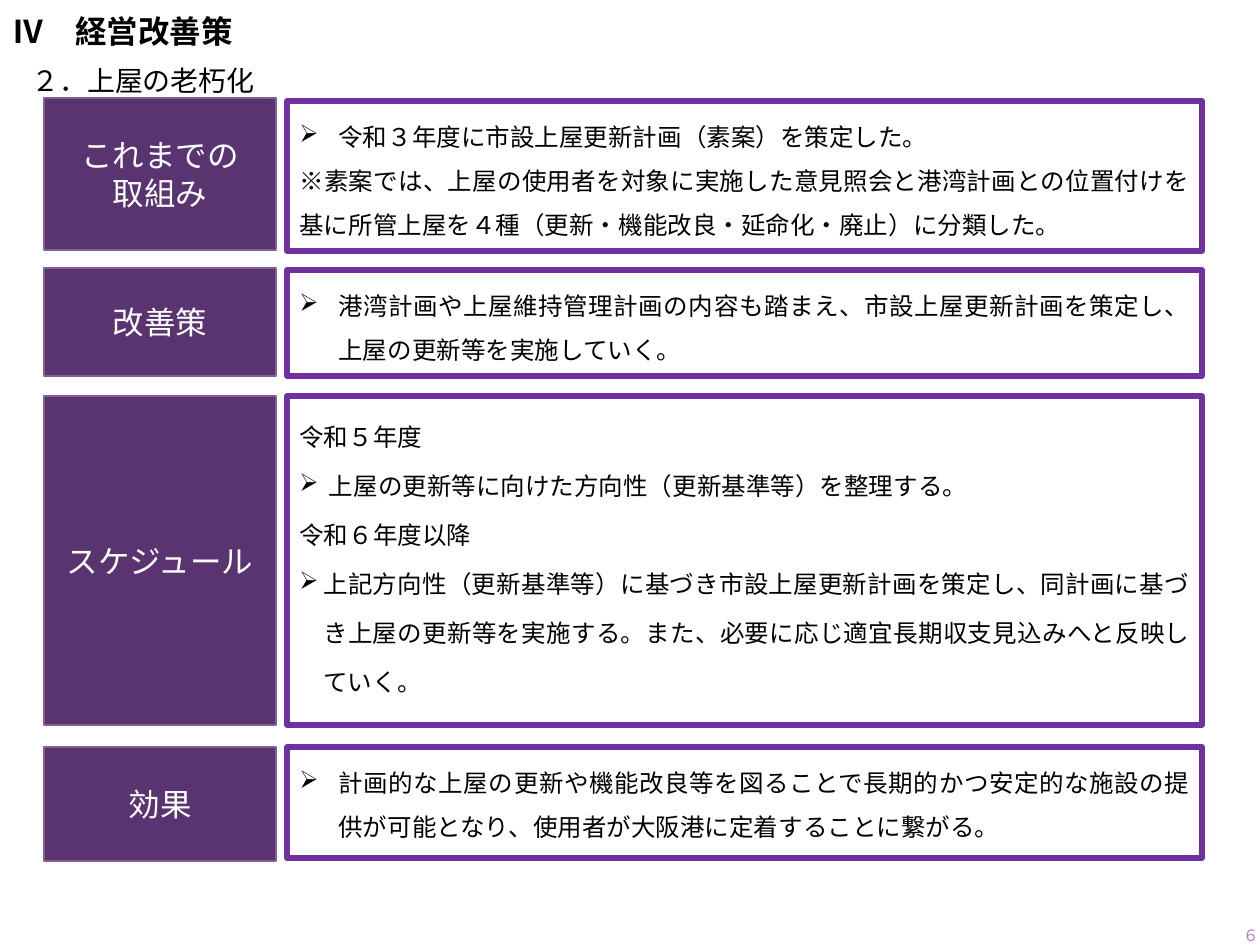
from dataclasses import dataclass

from lxml.etree import SubElement
from pptx import Presentation
from pptx.dml.color import RGBColor
from pptx.enum.shapes import MSO_SHAPE
from pptx.enum.text import MSO_ANCHOR, PP_ALIGN
from pptx.oxml.ns import qn
from pptx.util import Emu, Pt

SCALE = 914400 / 126
BLACK = RGBColor(0x00, 0x00, 0x00)
WHITE = RGBColor(0xFF, 0xFF, 0xFF)
PLUM = RGBColor(0x5A, 0x34, 0x71)
MAUVE = RGBColor(0x80, 0x62, 0x92)
PURPLE = RGBColor(0x70, 0x30, 0xA0)
LILAC = RGBColor(0xAD, 0x84, 0xC6)
SANS = "Arial"
SPARTAN = "League Spartan"
NOTO = "Noto Sans CJK JP"


def px(n: int) -> Emu:
    return Emu(round(n * SCALE))


@dataclass
class Box:
    left: int
    top: int
    width: int
    height: int

    def emu(self) -> list[Emu]:
        return [px(n) for n in (self.left, self.top, self.width, self.height)]


@dataclass
class Style:
    size: int
    font: str
    color: RGBColor
    align: PP_ALIGN = PP_ALIGN.JUSTIFY
    space: float | Pt | None = None
    bold: bool = False
    anchor: MSO_ANCHOR = MSO_ANCHOR.TOP


@dataclass
class Line:
    text: str
    indent: int = 0  # hanging indent; above zero the line has a bullet


@dataclass
class Row:
    label: list[Line]
    lines: list[Line]
    side: tuple[int, int]  # top and height of the label
    body: tuple[int, int]  # top and height of the text
    font: str = SANS
    space: float | Pt = 1.5


ROWS = [
    Row([Line("これまでの"), Line("取組み")],
        [Line("令和３年度に市設上屋更新計画（素案）を策定した。", 39),
         Line("※素案では、上屋の使用者を対象に実施した意見照会と港湾計画との位置付けを"
              "基に所管上屋を４種（更新・機能改良・延命化・廃止）に分類した。")],
        (98, 152), (101, 150)),
    Row([Line("改善策")],
        [Line("港湾計画や上屋維持管理計画の内容も踏まえ、市設上屋更新計画を策定し、"
              "上屋の更新等を実施していく。", 39)],
        (268, 108), (270, 106)),
    Row([Line("スケジュール")],
        [Line("令和５年度"),
         Line(" 上屋の更新等に向けた方向性（更新基準等）を整理する。", 24),
         Line("令和６年度以降"),
         Line("上記方向性（更新基準等）に基づき市設上屋更新計画を策定し、同計画に基づ"
              "き上屋の更新等を実施する。また、必要に応じ適宜長期収支見込みへと反映し"
              "ていく。", 24)],
        (396, 329), (396, 329), space=Pt(28)),
    Row([Line("効果")],
        [Line("計画的な上屋の更新や機能改良等を図ることで長期的かつ安定的な施設の提"
              "供が可能となり、使用者が大阪港に定着することに繋がる。", 39)],
        (747, 114), (747, 111), NOTO),
]


def write(frame, lines: list[Line], style: Style) -> None:
    frame.word_wrap = True
    frame.vertical_anchor = style.anchor
    for i, line in enumerate(lines):
        para = frame.add_paragraph() if i else frame.paragraphs[0]
        para.text = line.text
        para.alignment = style.align
        para.line_spacing = style.space
        font = para.font
        font.size, font.name, font.bold = Pt(style.size), style.font, style.bold
        font.color.rgb = style.color
        if line.indent:
            add_bullet(para, px(line.indent))


def add_bullet(para, indent: Emu) -> None:
    props = para._p.get_or_add_pPr()
    props.set("marL", str(indent))
    props.set("indent", str(-indent))
    mark = SubElement(props, qn("a:buChar"))
    mark.set("char", "➢")
    # the bullet has to come before the default run properties
    props.find(qn("a:defRPr")).addprevious(mark)


def add_text(slide, box: Box, text: str, style: Style) -> None:
    shape = slide.shapes.add_textbox(*box.emu())
    write(shape.text_frame, [Line(text)], style)


def add_panel(slide, box: Box, lines: list[Line], style: Style,
              fill: RGBColor | None, edge: RGBColor, weight: float) -> None:
    shape = slide.shapes.add_shape(MSO_SHAPE.RECTANGLE, *box.emu())
    shape.shadow.inherit = False
    if fill is None:
        shape.fill.background()
    else:
        shape.fill.solid()
        shape.fill.fore_color.rgb = fill
    shape.line.color.rgb = edge
    shape.line.width = Pt(weight)
    write(shape.text_frame, lines, style)


def main() -> None:
    deck = Presentation()
    deck.slide_width, deck.slide_height = px(1260), px(945)
    slide = deck.slides.add_slide(deck.slide_layouts[6])

    add_text(slide, Box(0, 6, 1086, 86), "Ⅳ　経営改善策",
             Style(18, SANS, BLACK, PP_ALIGN.LEFT, bold=True))
    add_text(slide, Box(19, 24, 890, 81), "２．上屋の老朽化",
             Style(16, SANS, BLACK, space=2.0))
    add_text(slide, Box(1201, 910, 70, 50), "６",
             Style(9, SPARTAN, LILAC, PP_ALIGN.RIGHT, anchor=MSO_ANCHOR.MIDDLE))

    head = Style(18, SPARTAN, WHITE, PP_ALIGN.CENTER, anchor=MSO_ANCHOR.MIDDLE)
    for row in ROWS:
        add_panel(slide, Box(44, row.side[0], 232, row.side[1]),
                  row.label, head, PLUM, MAUVE, 1.5)
        add_panel(slide, Box(287, row.body[0], 915, row.body[1]), row.lines,
                  Style(14, row.font, BLACK, space=row.space),
                  None, PURPLE, 3)

    deck.save("out.pptx")


if __name__ == "__main__":
    main()
